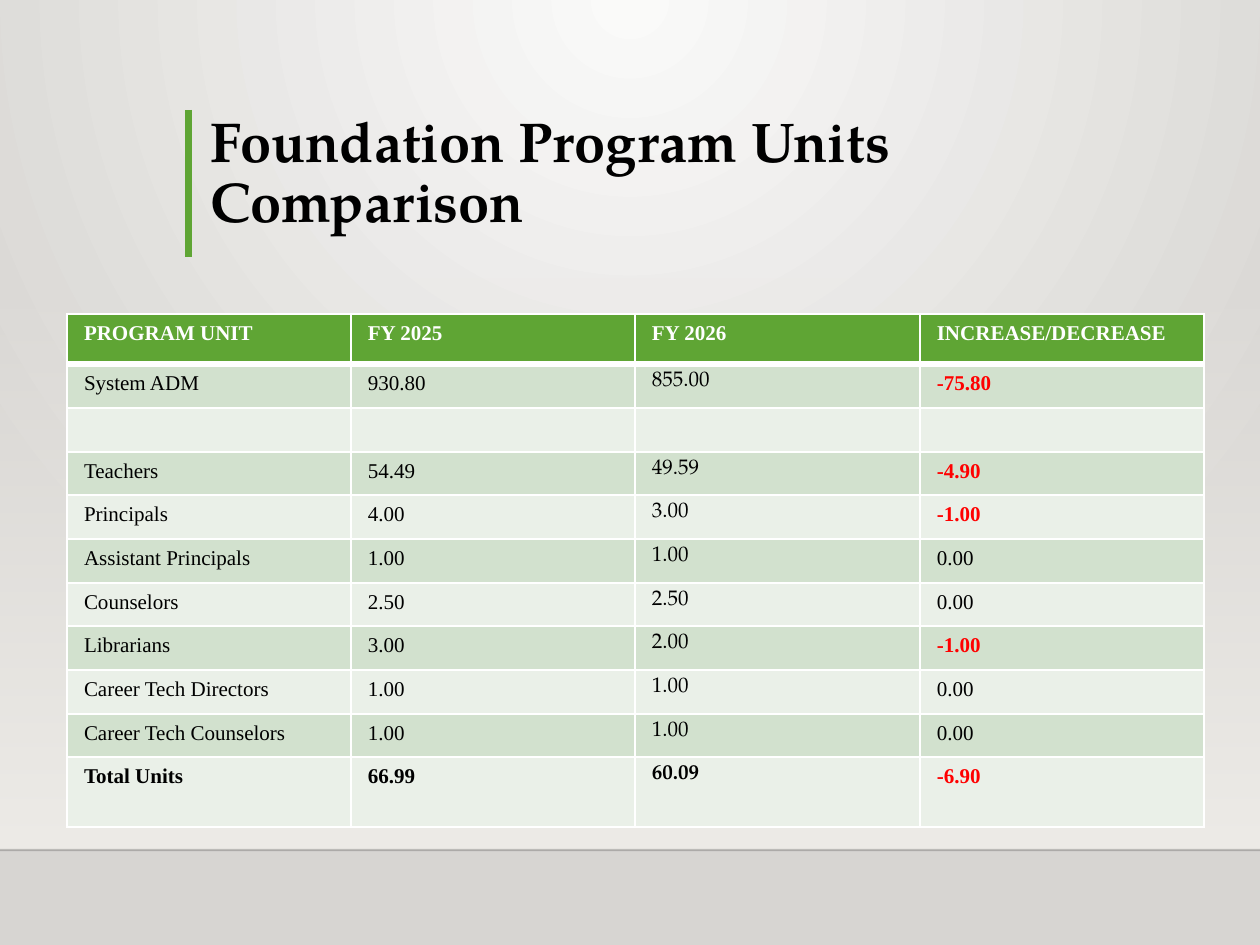
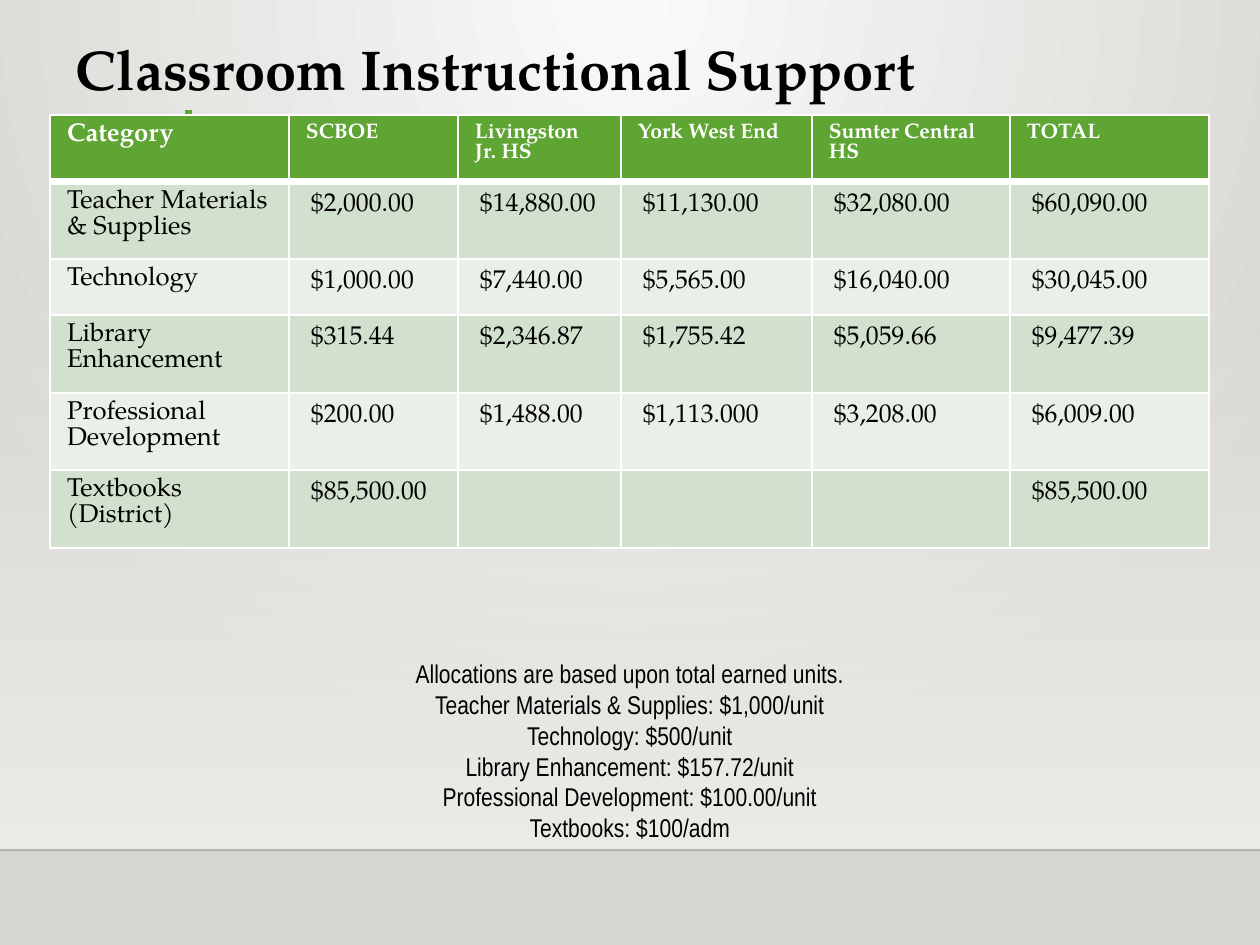
import pptx
import pptx.dml.color
import pptx.enum.shapes
import pptx.enum.text
import pptx.oxml
import pptx.oxml.ns
import pptx.util
from lxml import etree

EMU_PER_PX = 914400 / 168
SLIDE_W, SLIDE_H = 1260, 945
GREEN, WHITE, BLACK, RED = "5FA534", "FFFFFF", "000000", "FF0000"
BANDS = ("D2E1CE", "EAF0E8")
SERIF, TIMES, NARROW = "TeX Gyre Pagella", "Times New Roman", "Arial Narrow"
CELL_INSETS, MONEY_INSETS = (17, 8), (22, 11)

UNITS = [
    ("PROGRAM UNIT", "FY 2025", "FY 2026", "INCREASE/DECREASE"),
    ("System ADM", "930.80", "855.00", "-75.80"),
    ("", "", "", ""),
    ("Teachers", "54.49", "49.59", "-4.90"),
    ("Principals", "4.00", "3.00", "-1.00"),
    ("Assistant Principals", "1.00", "1.00", "0.00"),
    ("Counselors", "2.50", "2.50", "0.00"),
    ("Librarians", "3.00", "2.00", "-1.00"),
    ("Career Tech Directors", "1.00", "1.00", "0.00"),
    ("Career Tech Counselors", "1.00", "1.00", "0.00"),
    ("Total Units", "66.99", "60.09", "-6.90"),
]
SUPPORT = [
    ("Category", "SCBOE", "Livingston Jr. HS", "York West End", "Sumter Central HS", "TOTAL"),
    ("Teacher Materials & Supplies", "$2,000.00", "$14,880.00", "$11,130.00", "$32,080.00",
     "$60,090.00"),
    ("Technology", "$1,000.00", "$7,440.00", "$5,565.00", "$16,040.00", "$30,045.00"),
    ("Library Enhancement", "$315.44", "$2,346.87", "$1,755.42", "$5,059.66", "$9,477.39"),
    ("Professional Development", "$200.00", "$1,488.00", "$1,113.000", "$3,208.00", "$6,009.00"),
    ("Textbooks (District)", "$85,500.00", "", "", "", "$85,500.00"),
]
ALLOCATIONS = [
    "Allocations are based upon total earned units.",
    "Teacher Materials & Supplies: $1,000/unit",
    "Technology: $500/unit",
    "Library Enhancement: $157.72/unit",
    "Professional Development: $100.00/unit",
    "Textbooks: $100/adm",
]


def px(length):
    return pptx.util.Emu(round(length * EMU_PER_PX))


def rgb(color):
    return pptx.dml.color.RGBColor.from_string(color)


def drawing_xml(markup):
    return pptx.oxml.parse_xml(markup.replace(
        ">", ' xmlns:a="http://schemas.openxmlformats.org/drawingml/2006/main">', 1))


def set_gradient(fill, owner, start, end, direction, start_alpha=100):
    """Give the owner's fill a two-stop gradient."""
    fill.background()
    blank = owner.find(".//" + pptx.oxml.ns.qn("a:noFill"))
    blank.getparent().replace(blank, drawing_xml(
        f'<a:gradFill><a:gsLst><a:gs pos="0"><a:srgbClr val="{start}">'
        f'<a:alpha val="{start_alpha * 1000}"/></a:srgbClr></a:gs>'
        f'<a:gs pos="100000"><a:srgbClr val="{end}"/></a:gs></a:gsLst>{direction}</a:gradFill>'))


def write(frame, lines, size, font, color=BLACK, bold=False, spacing=None, align=None,
          anchor=None, insets=CELL_INSETS):
    """Fill a text frame or a table cell, one paragraph for each line."""
    frame.margin_left = frame.margin_right = px(insets[0])
    frame.margin_top = frame.margin_bottom = px(insets[1])
    frame.vertical_anchor = anchor
    body = getattr(frame, "text_frame", frame)
    body.word_wrap = True
    for number, line in enumerate(lines):
        paragraph = body.add_paragraph() if number else body.paragraphs[0]
        paragraph.alignment = align
        paragraph.line_spacing = spacing
        if not line:
            etree.SubElement(paragraph._p, pptx.oxml.ns.qn("a:endParaRPr"), sz=str(size * 100))
            continue
        run = paragraph.add_run()
        run.text = line
        run.font.size = pptx.util.Pt(size)
        run.font.name = font
        run.font.bold = bold
        run.font.color.rgb = rgb(color)


def add_rule(slide, start, end, color, width, alpha=100):
    rule = slide.shapes.add_connector(
        pptx.enum.shapes.MSO_CONNECTOR.STRAIGHT, *map(px, start + end))
    rule.line.color.rgb = rgb(color)
    rule.line.width = pptx.util.Pt(width)
    qn = pptx.oxml.ns.qn
    if alpha < 100:
        tint = rule._element.spPr.find(".//" + qn("a:srgbClr"))
        etree.SubElement(tint, qn("a:alpha"), val=str(alpha * 1000))
    etree.SubElement(rule._element.spPr, qn("a:effectLst"))


def add_base_slide(deck, title, title_box):
    """Backdrop, floor line, accent bar and title shared by both slides."""
    slide = deck.slides.add_slide(deck.slide_layouts[6])
    set_gradient(slide.background.fill, slide.element, "FAFAF9", "D7D5D2",
                 '<a:path path="circle"><a:fillToRect l="43000" t="0" r="43000" b="100000"/>'
                 '</a:path>')
    wall = slide.shapes.add_shape(pptx.enum.shapes.MSO_SHAPE.RECTANGLE,
                                  *map(px, (0, 278, SLIDE_W, 572)))
    wall.shadow.inherit = False
    set_gradient(wall.fill, wall._element, "EDEBE7", "EDEBE7",
                 '<a:lin ang="5400000" scaled="0"/>', start_alpha=0)
    wall.line.fill.background()
    add_rule(slide, (0, 850), (SLIDE_W, 850), "000001", 1, alpha=20)
    add_rule(slide, (189, 110), (189, 257), GREEN, 3)
    heading = slide.shapes.add_textbox(*map(px, title_box))
    write(heading.text_frame, [title], 24, SERIF, bold=True, spacing=0.9,
          anchor=pptx.enum.text.MSO_ANCHOR.BOTTOM, insets=(12, 12))
    return slide


def style_cell(cell, row, fill):
    """Fill a cell and rule it in white, thicker under the header."""
    cell.fill.solid()
    cell.fill.fore_color.rgb = rgb(fill)
    widths = {"lnL": 1, "lnR": 1, "lnT": 1, "lnB": 1}
    if row == 0:
        widths["lnB"] = 3
    else:
        del widths["lnT"]
    for place, (side, width) in enumerate(widths.items()):
        cell._tc.tcPr.insert(place, drawing_xml(
            f'<a:{side} w="{width * 12700}"><a:solidFill><a:srgbClr val="{WHITE}"/>'
            f'</a:solidFill></a:{side}>'))


def add_grid(slide, left, top, widths, heights, rows, text_format):
    """Place a banded table; text_format(row, column, text) gives each cell's format."""
    grid = slide.shapes.add_table(
        len(rows), len(widths), *map(px, (left, top, sum(widths), sum(heights)))).table
    grid.first_row = grid.horz_banding = False
    for column, width in zip(grid.columns, widths):
        column.width = px(width)
    for r, (height, texts) in enumerate(zip(heights, rows)):
        grid.rows[r].height = px(height)
        for c, text in enumerate(texts):
            cell = grid.cell(r, c)
            write(cell, [text], **text_format(r, c, text))
            style_cell(cell, r, BANDS[(r - 1) % 2] if r else GREEN)


def units_format(row, column, text):
    if row == 0:
        return dict(size=9, font=TIMES, color=WHITE, bold=True)
    decrease = text.startswith("-")
    return dict(size=9, font=SERIF if column == 2 else TIMES,
                color=RED if decrease else BLACK,
                bold=decrease or row == len(UNITS) - 1)


def support_format(row, column, text):
    if row == 0:
        return dict(size=9 if column else 11, font=SERIF, color=WHITE, bold=True)
    return dict(size=11, font=SERIF, insets=MONEY_INSETS if column and text else CELL_INSETS)


def add_units_slide(deck):
    slide = add_base_slide(deck, "Foundation Program Units Comparison", (198, 67, 937, 180))
    add_grid(slide, 67, 314, [284, 284, 285, 284], [50] + [44, 44, 43] * 3 + [70],
             UNITS, units_format)


def add_support_slide(deck):
    slide = add_base_slide(deck, "Classroom Instructional Support", (64, 4, 1196, 111))
    add_grid(slide, 50, 115, [239, 169, 163, 191, 198, 199], [59, 69, 56, 69, 69, 69],
             SUPPORT, support_format)
    # Basis of the allocations
    basis = slide.shapes.add_textbox(*map(px, (360, 650, 540, 203)))
    write(basis.text_frame, ALLOCATIONS, 11, NARROW, align=pptx.enum.text.PP_ALIGN.CENTER)


def main():
    deck = pptx.Presentation()
    deck.slide_width, deck.slide_height = px(SLIDE_W), px(SLIDE_H)
    add_units_slide(deck)
    add_support_slide(deck)
    deck.save("out.pptx")


if __name__ == "__main__":
    main()
